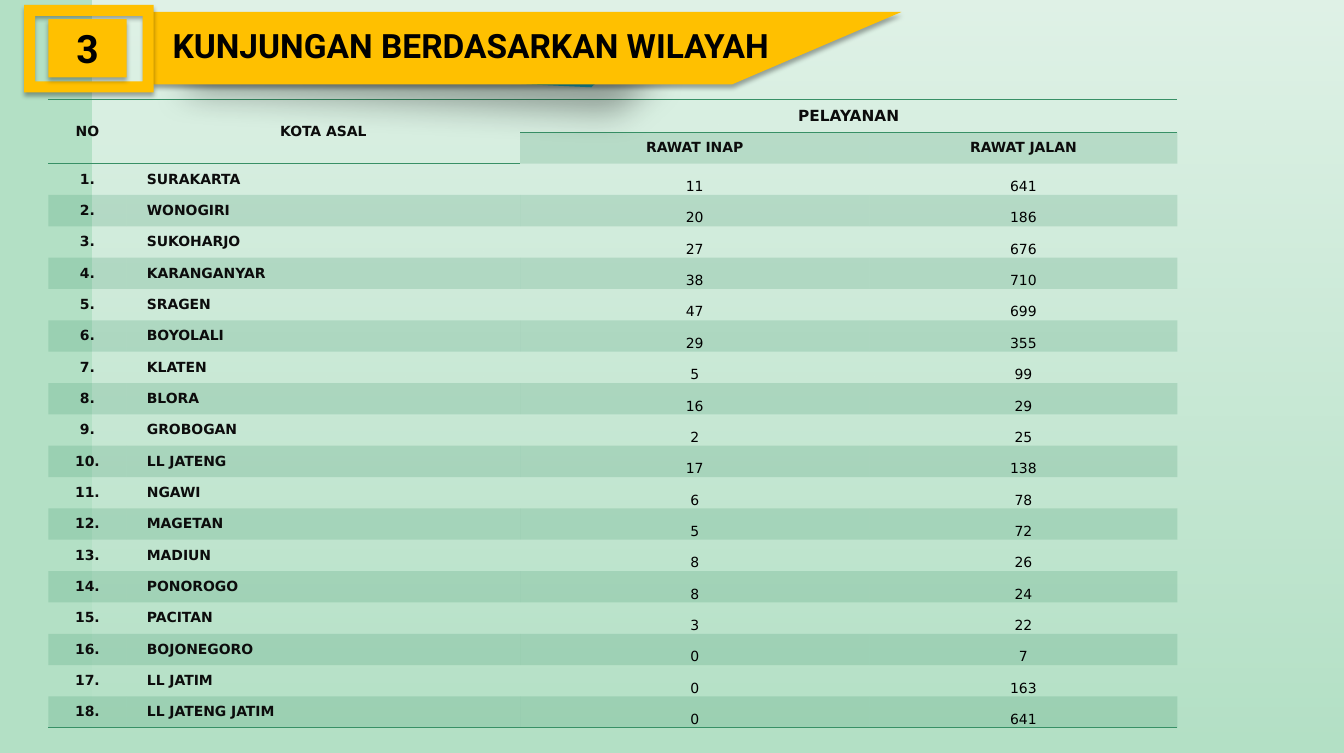
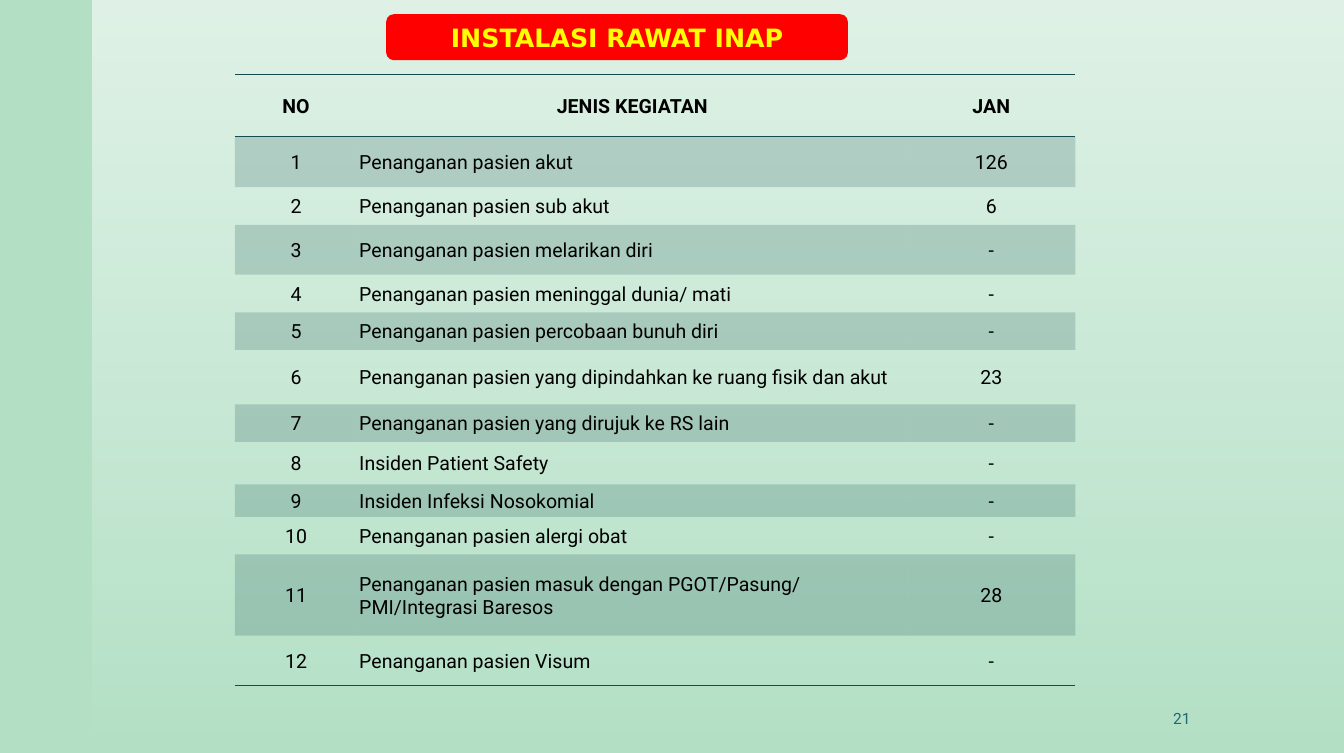
from collections.abc import Callable
from dataclasses import dataclass, replace
from typing import Any

from lxml import etree
from pptx import Presentation
from pptx.dml.color import RGBColor
from pptx.enum.shapes import MSO_SHAPE
from pptx.enum.text import MSO_ANCHOR, MSO_AUTO_SIZE, PP_ALIGN
from pptx.oxml.ns import qn
from pptx.util import Pt

RECT, ROUND, FRAME = MSO_SHAPE.RECTANGLE, MSO_SHAPE.ROUNDED_RECTANGLE, MSO_SHAPE.FRAME
LEFT, MID, RIGHT = PP_ALIGN.LEFT, PP_ALIGN.CENTER, PP_ALIGN.RIGHT
CENTER, BOTTOM = MSO_ANCHOR.MIDDLE, MSO_ANCHOR.BOTTOM
FIXED = MSO_AUTO_SIZE.NONE

MINT = RGBColor(0xB3, 0xE0, 0xC5)
WHITE = RGBColor(0xFF, 0xFF, 0xFF)
BLACK = RGBColor(0x00, 0x00, 0x00)
INK = RGBColor(0x0C, 0x0C, 0x0C)
GREEN = RGBColor(0x38, 0x90, 0x66)
PINE = RGBColor(0x16, 0x4B, 0x4F)
TEAL = RGBColor(0x1B, 0x91, 0xA1)
GRAY = RGBColor(0x1F, 0x69, 0x6F)
GOLD = RGBColor(0xFF, 0xC0, 0x00)
RED = RGBColor(0xFF, 0x00, 0x00)
YELLOW = RGBColor(0xFF, 0xFF, 0x00)

WIDE, HIGH = 964, 540
PLAIN = "{2D5ABB26-0587-4C30-8999-92F81FD0307C}"  # table style without grid

Box = tuple[float, float, float, float]
Point = tuple[float, float]


@dataclass(frozen=True)
class Style:
    font: str
    size: float
    color: RGBColor = BLACK
    bold: bool = False
    align: Any = MID
    anchor: Any = CENTER
    inset: Box = (7.2, 3.6, 7.2, 3.6)


@dataclass(frozen=True)
class Shade:
    alpha: int
    blur: float
    dist: float
    angle: int


@dataclass(frozen=True)
class Grid:
    left: float
    top: float
    cols: list[float]
    rows: list[float]
    tint: RGBColor
    text: list[tuple[str, ...]]
    spans: tuple[tuple[int, int, int, int], ...] = ()


SOFT = Shade(32, 3.5, 2.2, 90)
DEEP = Shade(35, 25, 25, 45)

HEAD = Style("Roboto", 24, bold=True, align=LEFT, inset=(0, 3.6, 7.2, 3.6))
BADGE = Style("Roboto", 28, bold=True)
PILL = Style("DejaVu Sans", 18.1, YELLOW, True)
PAGE = Style("Roboto", 11.1, GRAY, align=RIGHT)
CITY = Style("DejaVu Sans", 10, INK, True, inset=(14.6, 5.4, 14.6, 5.4))
COUNT = Style("DejaVu Sans", 10, anchor=BOTTOM, inset=(0, 0, 0, 0))
TASK = Style("Roboto", 14, inset=(1.4, 1.4, 1.4, 0))

VISITS = [
    ("SURAKARTA", 11, 641), ("WONOGIRI", 20, 186), ("SUKOHARJO", 27, 676),
    ("KARANGANYAR", 38, 710), ("SRAGEN", 47, 699), ("BOYOLALI", 29, 355),
    ("KLATEN", 5, 99), ("BLORA", 16, 29), ("GROBOGAN", 2, 25),
    ("LL JATENG", 17, 138), ("NGAWI", 6, 78), ("MAGETAN", 5, 72),
    ("MADIUN", 8, 26), ("PONOROGO", 8, 24), ("PACITAN", 3, 22),
    ("BOJONEGORO", 0, 7), ("LL JATIM", 0, 163), ("LL JATENG JATIM", 0, 641),
]
TASKS = [
    ("Penanganan pasien akut", "126", 36.2),
    ("Penanganan pasien sub akut", "6", 27),
    ("Penanganan pasien melarikan diri", "-", 35.8),
    ("Penanganan pasien meninggal dunia/ mati", "-", 27),
    ("Penanganan pasien percobaan bunuh diri", "-", 27),
    ("Penanganan pasien yang dipindahkan ke ruang fisik dan akut", "23", 39.1),
    ("Penanganan pasien yang dirujuk ke RS lain", "-", 26.9),
    ("Insiden Patient Safety", "-", 30.5),
    ("Insiden Infeksi Nosokomial", "-", 23.3),
    ("Penanganan pasien alergi obat", "-", 26.9),
    ("Penanganan pasien masuk dengan PGOT/Pasung/\vPMI/Integrasi Baresos", "28", 58.4),
    ("Penanganan pasien Visum", "-", 35.5),
]


def assign(item: Any, values: dict[str, Any]) -> None:
    for name, value in values.items():
        setattr(item, name, value)


def node(parent: Any, tag: str, **attrs: Any) -> Any:
    return etree.SubElement(parent, qn(tag), {k: str(v) for k, v in attrs.items()})


def fade(color: Any, part: int) -> None:
    node(color, "a:alpha", val=part * 1000)


def write(host: Any, frame: Any, text: str, style: Style) -> None:
    """Fill a frame; host (a cell or the frame) holds insets and anchor."""
    sides = ("margin_left", "margin_top", "margin_right", "margin_bottom")
    assign(host, {k: Pt(v) for k, v in zip(sides, style.inset)})
    host.vertical_anchor = style.anchor
    frame.word_wrap = True
    frame.paragraphs[0].text = text
    look = {"name": style.font, "size": Pt(style.size), "bold": style.bold}
    for para in frame.paragraphs:
        para.alignment = style.align
        for run in para.runs:
            assign(run.font, look)
            run.font.color.rgb = style.color


def paint(shape: Any, color: RGBColor, shade: Shade | None = None) -> None:
    shape.shadow.inherit = False
    shape.fill.solid()
    shape.fill.fore_color.rgb = color
    shape.line.fill.background()
    if shade:
        glow = node(shape._element.spPr.find(qn("a:effectLst")), "a:outerShdw",
                    blurRad=Pt(shade.blur), dist=Pt(shade.dist),
                    dir=shade.angle * 60000, algn="tl", rotWithShape=0)
        fade(node(glow, "a:srgbClr", val=BLACK), shade.alpha)


def add_block(slide: Any, kind: Any, box: Box, color: RGBColor,
              shade: Shade | None = None) -> Any:
    shape = slide.shapes.add_shape(kind, *map(Pt, box))
    paint(shape, color, shade)
    return shape


def add_path(slide: Any, points: list[Point], color: RGBColor, shade: Shade) -> None:
    spots = [(Pt(x), Pt(y)) for x, y in points]
    pen = slide.shapes.build_freeform(*spots[0])
    pen.add_line_segments(spots[1:], close=True)
    paint(pen.convert_to_shape(), color, shade)


def set_title(slide: Any, text: str, box: Box, style: Style) -> None:
    title = slide.shapes.title
    assign(title, dict(zip(("left", "top", "width", "height"), map(Pt, box))))
    title.text_frame.auto_size = FIXED
    write(title.text_frame, title.text_frame, text, style)
    slide.shapes._spTree.append(title._element)  # bring to front


def rule(cell: Any, tags: str, color: RGBColor) -> None:
    for tag in tags:
        line = node(cell._tc.get_or_add_tcPr(), f"a:ln{tag}", w=Pt(1))
        node(node(line, "a:solidFill"), "a:srgbClr", val=color)


def add_grid(slide: Any, grid: Grid, pick: Callable[[int, int], Style]) -> None:
    frame = slide.shapes.add_table(
        len(grid.rows), len(grid.cols), Pt(grid.left), Pt(grid.top),
        Pt(sum(grid.cols)), Pt(sum(grid.rows)))
    table = frame.table
    assign(table, {"first_row": False, "horz_banding": False})
    table._tbl.tblPr.find(qn("a:tableStyleId")).text = PLAIN
    for col, width in zip(table.columns, grid.cols):
        col.width = Pt(width)
    for row, height in zip(table.rows, grid.rows):
        row.height = Pt(height)
    for top, left, low, right in grid.spans:
        table.cell(top, left).merge(table.cell(low, right))
    last = len(grid.rows) - 1
    for r, row in enumerate(grid.text):
        for c, text in enumerate(row):
            cell = table.cell(r, c)
            if r == 0:
                rule(cell, "TB", grid.tint)
            elif r == last or cell.is_spanned:
                rule(cell, "B", grid.tint)
            if r % 2 and not cell.is_spanned:
                cell.fill.solid()
                cell.fill.fore_color.rgb = grid.tint
                fade(cell._tc.tcPr.find(qn("a:solidFill"))[0], 20)
            else:
                cell.fill.background()
            if not cell.is_spanned:
                write(cell, cell.text_frame, text, pick(r, c))


def city_style(row: int, col: int) -> Style:
    if row < 2:
        return replace(CITY, size=11) if (row, col) == (0, 2) else CITY
    if col > 1:
        return COUNT
    return replace(CITY, align=LEFT) if col else CITY


def task_style(row: int, col: int) -> Style:
    if row == 0:
        return replace(TASK, bold=True)
    return replace(TASK, align=LEFT) if col == 1 else TASK


def set_master(deck: Any, slide: Any) -> None:
    """Give the master its backdrop and a panel that fades downwards."""
    master = deck.slide_master
    master.background.fill.solid()
    master.background.fill.fore_color.rgb = MINT
    panel = add_block(slide, RECT, (66.2, 0, WIDE - 66.2, HIGH), WHITE)
    panel.fill.gradient()
    panel.fill.gradient_angle = 270
    for stop, part in zip(panel.fill.gradient_stops, (60, 0)):
        stop.color.rgb = WHITE
        fade(stop._gs[0], part)
    master.shapes._spTree.insert(2, panel._element)


def city_slide(slide: Any) -> None:
    # Visits by city
    text = [("NO", "KOTA ASAL", "PELAYANAN", ""),
            ("", "", "RAWAT INAP", "RAWAT JALAN")]
    text += [(f"{i}.", name, str(stay), str(walk))
             for i, (name, stay, walk) in enumerate(VISITS, 1)]
    rows = [23.6] + [22.5] * (len(text) - 1)
    spans = ((0, 0, 1, 0), (0, 1, 1, 1), (0, 2, 0, 3))
    add_grid(slide, Grid(34.6, 71.2, [56.2, 282.2, 250.6, 221], rows, GREEN,
                         text, spans), city_style)
    # Ribbon and number badge
    add_path(slide, [(117.4, 13), (450.7, 28.8), (450, 38.9), (424.1, 62.6),
                     (115.9, 48.2)], TEAL, DEEP)
    add_path(slide, [(109.4, 8.6), (646.6, 8.6), (525, 60.6), (109.4, 60.6)], GOLD, SOFT)
    add_block(slide, FRAME, (17.3, 3.6, 92.9, 62.6), GOLD, SOFT)
    badge = add_block(slide, RECT, (34.6, 13.7, 56.2, 41.8), GOLD, SOFT)
    write(badge.text_frame, badge.text_frame, "3", BADGE)
    set_title(slide, "KUNJUNGAN BERDASARKAN WILAYAH", (123.8, 13.7, 483, 36.7), HEAD)


def task_slide(slide: Any) -> None:
    # Page number
    page = slide.shapes.add_textbox(*map(Pt, (636.5, 500.4, 224.6, 28.8)))
    write(page.text_frame, page.text_frame, "21", PAGE)
    # Title on a red pill
    pill = (277, 10.2, 331.2, 33)
    add_block(slide, ROUND, pill, RED)
    set_title(slide, "INSTALASI RAWAT INAP", pill, PILL)
    # Inpatient activities
    text = [("NO", "JENIS KEGIATAN", "JAN")]
    text += [(str(i), name, count) for i, (name, count, _) in enumerate(TASKS, 1)]
    rows = [44.8] + [height for _, _, height in TASKS]
    add_grid(slide, Grid(168.5, 53.2, [87.8, 394.6, 120.4], rows, PINE, text), task_style)


def main() -> None:
    deck = Presentation()
    assign(deck, {"slide_width": Pt(WIDE), "slide_height": Pt(HIGH)})
    layout = deck.slide_layouts.get_by_name("Title Only")
    first, second = (deck.slides.add_slide(layout) for _ in range(2))
    set_master(deck, first)
    city_slide(first)
    task_slide(second)
    deck.save("out.pptx")


if __name__ == "__main__":
    main()
